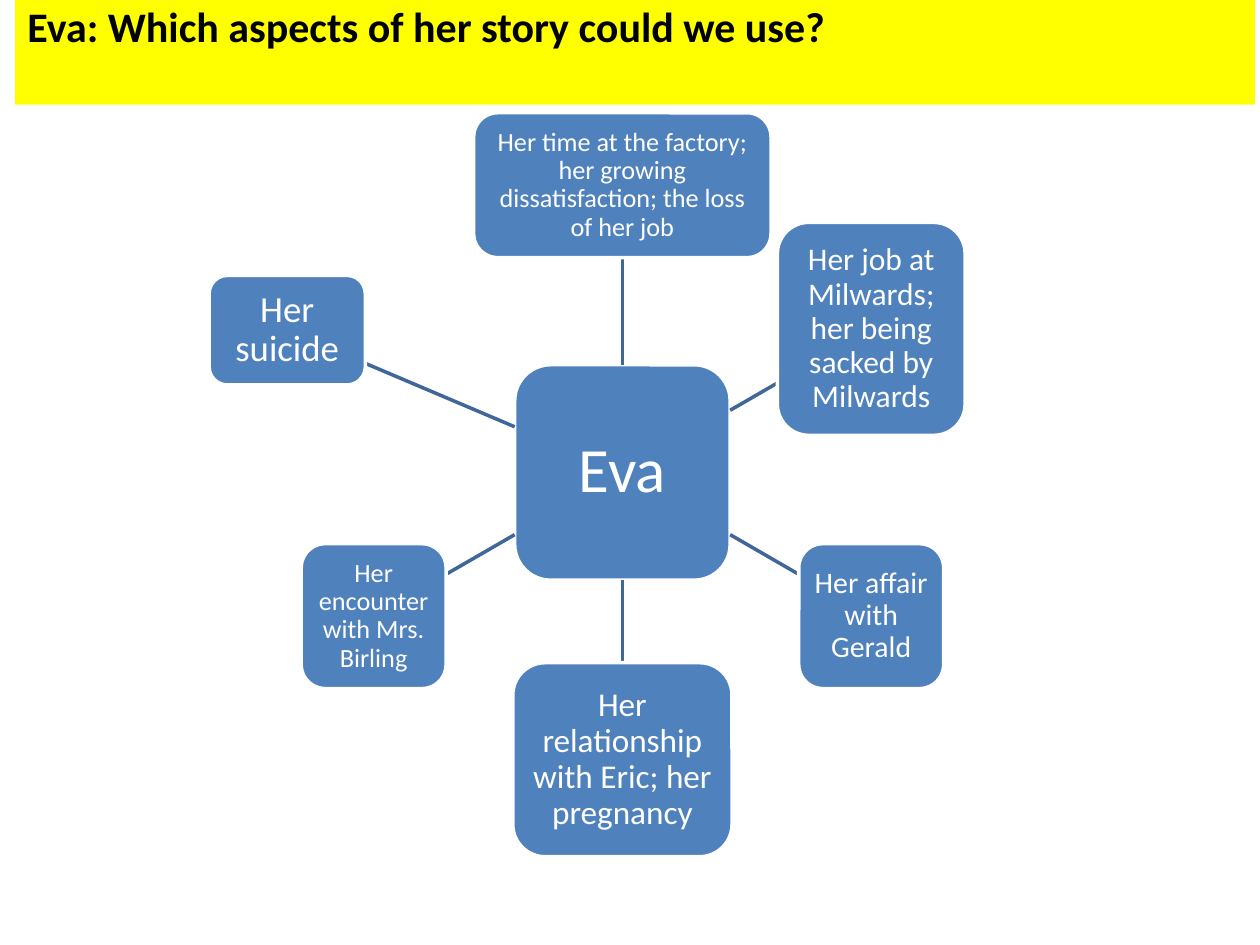
"""Build a mind map of the parts of Eva's story around a central hub."""
from math import cos, radians, sin

from lxml import etree
from pptx import Presentation
from pptx import util as u
from pptx.dml.color import RGBColor
from pptx.enum import shapes, text
from pptx.oxml.ns import qn

deck = Presentation()
deck.slide_width, deck.slide_height = u.Inches(10), u.Inches(7.5)
slide = deck.slides.add_slide(deck.slide_layouts[6])
cell = deck.slide_width / 100


def color(hex_code):
    return RGBColor.from_string(hex_code)


def write(shape, wording, size, ink="FFFFFF", bold=False,
          align=text.PP_ALIGN.CENTER, spacing=0.9, inset=0.05):
    frame = shape.text_frame
    frame.word_wrap = True
    frame.vertical_anchor = text.MSO_ANCHOR.MIDDLE
    frame.margin_left = frame.margin_right = u.Inches(inset)
    frame.margin_top = frame.margin_bottom = u.Inches(inset)
    paragraph = frame.paragraphs[0]
    paragraph.alignment, paragraph.line_spacing = align, spacing
    run = paragraph.add_run()
    run.text = wording
    run.font.name, run.font.size, run.font.bold = "Calibri", u.Pt(size), bold
    run.font.color.rgb = color(ink)


heading = slide.shapes.add_shape(
    shapes.MSO_SHAPE.RECTANGLE, *[int(n * cell) for n in (1.2, -4.2, 98.4, 12.5)])
heading.shadow.inherit = False
heading.fill.solid()
heading.fill.fore_color.rgb = color("FFFF00")
heading.line.fill.background()
write(heading, "Eva: Which aspects of her story could we use?", 24, ink="000000",
      bold=True, align=text.PP_ALIGN.LEFT, spacing=1.0, inset=0.1)

hub_x, hub_y, hub_side, ring = 49.4, 37.5, 17.1, 22.8
topics = [
    ("Eva", 0, 0, hub_side, hub_side, 36, 0.1),
    ("Her time at the factory; her growing dissatisfaction; the loss of her job",
     270, ring, 23.6, 11.5, 15, 0.04),
    ("Her job at Milwards; her being sacked by Milwards",
     330, ring, 14.9, 16.9, 18, 0.05),
    ("Her affair with Gerald", 30, ring, 11.5, 11.5, 17, 0.05),
    ("Her relationship with Eric; her pregnancy", 90, ring, 17.4, 15.4, 19, 0.05),
    ("Her encounter with Mrs. Birling", 150, ring, 11.5, 11.5, 15, 0.04),
    ("Her suicide", 203, 28.9, 12.4, 8.7, 21, 0.06),
]

for wording, angle, distance, width, height, size, inset in topics:
    across, down = cos(radians(angle)), sin(radians(angle))
    x, y = hub_x + distance * across, hub_y + distance * down

    if distance:
        leave = hub_side / 2 / max(abs(across), abs(down))
        arrive = distance - min(width / 2 / max(abs(across), 0.01),
                                height / 2 / max(abs(down), 0.01))
        ends = [(hub_x + reach * across, hub_y + reach * down)
                for reach in (leave, arrive)]
        spoke = slide.shapes.add_connector(
            shapes.MSO_CONNECTOR.STRAIGHT,
            *[int(n * cell) for end in ends for n in end])
        spoke.line.color.rgb = color("3F6797")
        spoke.line.width = u.Pt(2)
        etree.SubElement(spoke._element.spPr, qn("a:effectLst"))

    topic = slide.shapes.add_shape(
        shapes.MSO_SHAPE.ROUNDED_RECTANGLE,
        *[int(n * cell) for n in (x - width / 2, y - height / 2, width, height)])
    topic.shadow.inherit = False
    topic.fill.solid()
    topic.fill.fore_color.rgb = color("4F81BD")
    topic.line.color.rgb = color("FFFFFF")
    topic.line.width = u.Pt(2)
    write(topic, wording, size, inset=inset)

deck.save("out.pptx")
